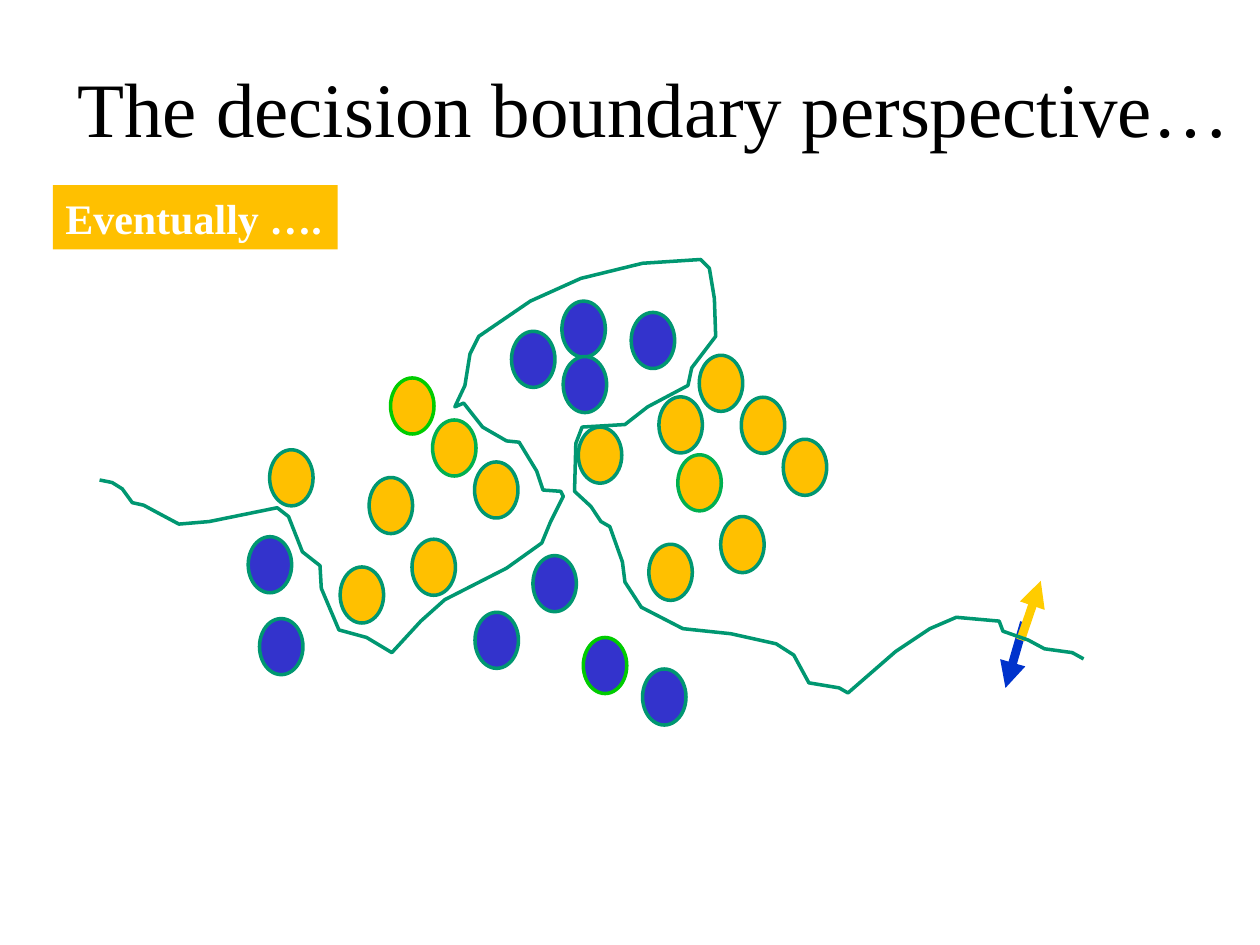
from lxml import etree
from pptx import Presentation
from pptx.dml.color import RGBColor
from pptx.enum import shapes, text
from pptx.oxml.ns import qn
from pptx.util import Inches, Pt

FONT = "Times New Roman"
BLUE, GOLD = "3333CC", "FFC000"
TEAL, GREEN, BRIGHT_GREEN = "009771", "00B050", "00CC00"
SAMPLE_SIZE = (0.345, 0.445)

# Both gold clusters have the same layout: three on a diagonal, three below
DIAGONAL_STEP = 1 / 3
CLUSTER = [(i * DIAGONAL_STEP, i * DIAGONAL_STEP) for i in range(3)]
CLUSTER += [(-0.17, 0.79), (0.17, 1.28), (-0.4, 1.5)]
# Cluster origin, and the outlines that differ from teal by position in it
CLUSTERS = [
    ((3.1, 3), {0: BRIGHT_GREEN, 1: GREEN}),
    ((5.55, 2.82), {3: GREEN}),
]
LONE_GOLD = [(2.14, 3.57), (4.59, 3.39), (5.23, 3.15)]
LONE_BLUE = [
    (4.06, 2.63), (4.46, 2.39), (4.47, 2.83), (5.01, 2.48), (1.97, 4.26),
    (2.06, 4.91), (3.77, 4.86), (4.23, 4.41), (5.1, 5.31)]

# Points along the boundary, in hundredths of an inch
BOUNDARY = [
    (79, 381), (89, 383), (97, 388), (105, 399), (114, 401), (127, 408),
    (142, 416), (166, 414), (220, 403), (229, 410), (240, 438), (254, 449),
    (255, 467), (269, 500), (291, 506), (311, 518), (334, 493), (353, 476),
    (402, 451), (430, 431), (437, 414), (447, 394), (445, 390), (431, 389),
    (426, 374), (412, 351), (402, 350), (383, 339), (368, 320), (361, 323),
    (369, 306), (373, 281), (380, 267), (421, 239), (461, 221), (510, 209),
    (556, 206), (563, 213), (567, 237), (568, 267), (549, 292), (546, 306),
    (514, 323), (496, 337), (462, 339), (457, 352), (456, 390), (469, 402),
    (477, 414), (484, 418), (494, 446), (496, 462), (509, 482), (542, 499),
    (580, 503), (616, 511), (630, 520), (642, 542), (666, 546), (673, 550),
    (711, 517), (738, 499), (759, 490), (793, 493), (796, 501), (816, 508),
    (829, 515), (851, 518), (860, 523),
]


def rgb(hex_color):
    return RGBColor.from_string(hex_color)


def set_line(line, color, width):
    line.color.rgb = rgb(color)
    line.width = Pt(width)


def add_label(slide, box, words, size, color, align, bold=False, fill=None, wrap=True):
    label = slide.shapes.add_textbox(*map(Inches, box))
    if fill:
        label.fill.solid()
        label.fill.fore_color.rgb = rgb(fill)
    frame = label.text_frame
    frame.text = words
    frame.word_wrap = wrap
    frame.vertical_anchor = text.MSO_ANCHOR.MIDDLE
    paragraph = frame.paragraphs[0]
    paragraph.alignment = align
    font = paragraph.runs[0].font
    font.name, font.size, font.bold = FONT, Pt(size), bold
    font.color.rgb = rgb(color)


def add_sample(slide, corner, fill, outline=TEAL):
    sample = slide.shapes.add_shape(
        shapes.MSO_SHAPE.OVAL, *map(Inches, corner + SAMPLE_SIZE))
    sample.shadow.inherit = False
    sample.fill.solid()
    sample.fill.fore_color.rgb = rgb(fill)
    set_line(sample.line, outline, 2)


def add_cluster(slide, origin, outlines):
    left, top = origin
    for index, (dx, dy) in enumerate(CLUSTER):
        add_sample(slide, (left + dx, top + dy), GOLD, outlines.get(index, TEAL))


def add_arrow(slide, start, end, color):
    arrow = slide.shapes.add_connector(
        shapes.MSO_CONNECTOR.STRAIGHT, *map(Inches, start + end))
    set_line(arrow.line, color, 5)
    head = etree.SubElement(arrow.line._get_or_add_ln(), qn("a:tailEnd"))
    head.set("type", "triangle")
    etree.SubElement(arrow._element.spPr, qn("a:effectLst"))


def add_boundary(slide, points, color):
    builder = slide.shapes.build_freeform(*points[0], scale=Inches(0.01))
    builder.add_line_segments(points[1:], close=False)
    boundary = builder.convert_to_shape()
    boundary.shadow.inherit = False
    boundary.fill.background()
    set_line(boundary.line, color, 2)


def main():
    deck = Presentation()
    deck.slide_width, deck.slide_height = Inches(10), Inches(7.5)
    slide = deck.slides.add_slide(deck.slide_layouts[6])

    add_label(slide, (0.38, 0.44, 9.62, 0.82), "The decision boundary perspective…",
              44, "000000", text.PP_ALIGN.CENTER)
    for origin, outlines in CLUSTERS:
        add_cluster(slide, origin, outlines)
    for corner in LONE_GOLD:
        add_sample(slide, corner, GOLD)
    for corner in LONE_BLUE:
        add_sample(slide, corner, BLUE)
    add_sample(slide, (4.63, 5.06), BLUE, BRIGHT_GREEN)
    add_arrow(slide, (8.13, 4.94), (7.98, 5.46), "0033CC")
    add_arrow(slide, (8.1, 5.08), (8.26, 4.61), "FFCC00")
    add_label(slide, (0.42, 1.47, 2.26, 0.51), "Eventually ….", 24, "FFFFFF",
              text.PP_ALIGN.LEFT, bold=True, fill=GOLD, wrap=False)
    add_boundary(slide, BOUNDARY, TEAL)

    deck.save("out.pptx")


if __name__ == "__main__":
    main()
